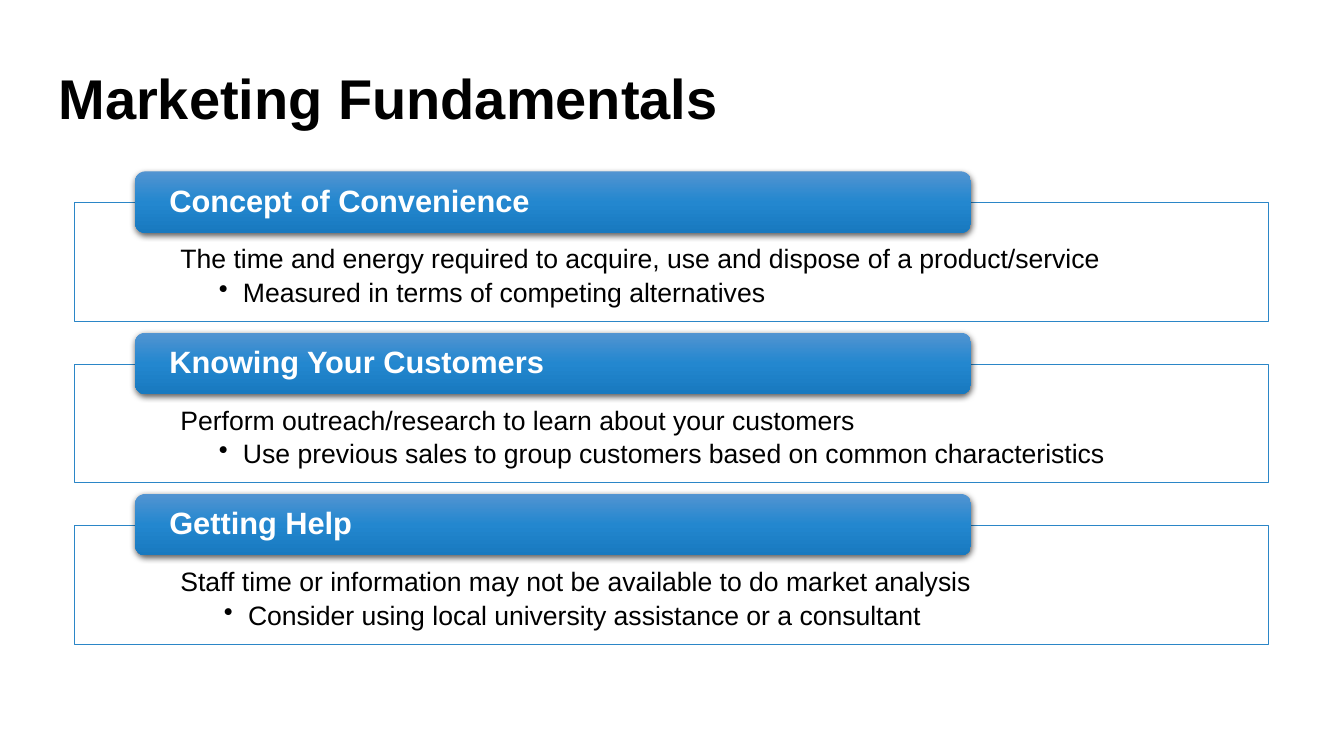
from pptx import Presentation
from pptx.dml.color import RGBColor
from pptx.enum import shapes, text
from pptx.oxml import parse_xml
from pptx.oxml.ns import nsdecls
from pptx.util import Inches, Pt

TITLE = "Marketing Fundamentals"
SECTIONS = [
    ("Concept of Convenience",
     "The time and energy required to acquire, use and dispose of a product/service",
     "Measured in terms of competing alternatives", 0.75),
    ("Knowing Your Customers",
     "Perform outreach/research to learn about your customers",
     "Use previous sales to group customers based on common characteristics", 0.75),
    ("Getting Help",
     "Staff time or information may not be available to do market analysis",
     "Consider using local university assistance or a consultant", 0.8),
]
COLORS = {"white": "FFFFFF", "black": "000000", "outline": "2B86C7"}
BAR_STOPS = [(0, "5294D1"), (50, "2387CF"), (100, "1879BF")]
FONT = "Arial"
BAR_TOP, PITCH, PANEL_DROP = 1.7, 1.6, 0.31
HANGING = 0.24


def rgb(name):
    return RGBColor.from_string(COLORS[name])


def set_frame(tf, left, top, right, bottom, anchor):
    tf.word_wrap = True
    tf.margin_left, tf.margin_top = Inches(left), Inches(top)
    tf.margin_right, tf.margin_bottom = Inches(right), Inches(bottom)
    tf.vertical_anchor = anchor


def format_paragraph(p, size, color, bold=False):
    p.alignment = text.PP_ALIGN.LEFT
    for r in p.runs:
        r.font.name, r.font.size, r.font.bold = FONT, Pt(size), bold
        r.font.color.rgb = rgb(color)


def indent(p, left, first=0):
    pPr = p._p.get_or_add_pPr()
    pPr.set("marL", str(Inches(left)))
    pPr.set("indent", str(Inches(first)))
    return pPr


def add_panel(slide, top, statement, point, point_indent):
    sp = slide.shapes.add_shape(shapes.MSO_SHAPE.RECTANGLE, Inches(0.74),
                                Inches(top), Inches(11.84), Inches(1.18))
    sp.shadow.inherit = False
    sp.fill.solid()
    sp.fill.fore_color.rgb = rgb("white")
    sp.line.color.rgb = rgb("outline")
    sp.line.width = Pt(0.5)
    tf = sp.text_frame
    set_frame(tf, 0.92, 0.43, 0.92, 0.15, text.MSO_ANCHOR.TOP)
    tf.text = f"{statement}\n{point}"
    for p in tf.paragraphs:
        p.line_spacing = 0.9
        p.space_after = Pt(3.5)
        format_paragraph(p, 19, "black")
    indent(tf.paragraphs[0], 0.13)
    pPr = indent(tf.paragraphs[1], point_indent, -HANGING)
    pPr.append(parse_xml(f'<a:buChar {nsdecls("a")} char="•"/>'))


def add_bar(slide, top, heading):
    sp = slide.shapes.add_shape(shapes.MSO_SHAPE.ROUNDED_RECTANGLE, Inches(1.34),
                                Inches(top), Inches(8.29), Inches(0.61))
    sp.shadow.inherit = False
    sp.line.fill.background()
    stops = "".join(f'<a:gs pos="{pos * 1000}"><a:srgbClr val="{color}"/></a:gs>'
                    for pos, color in BAR_STOPS)
    spPr = sp._element.spPr
    spPr.insert(2, parse_xml(
        f'<a:gradFill {nsdecls("a")} rotWithShape="1"><a:gsLst>{stops}</a:gsLst>'
        '<a:lin ang="5400000" scaled="0"/></a:gradFill>'))
    spPr[-1].append(parse_xml(
        f'<a:outerShdw {nsdecls("a")} blurRad="{Pt(4.5)}" dist="{Pt(1.5)}" '
        f'dir="5400000" rotWithShape="0"><a:srgbClr val="{COLORS["black"]}">'
        '<a:alpha val="63000"/></a:srgbClr></a:outerShdw>'))
    tf = sp.text_frame
    set_frame(tf, 0.31, 0, 0.31, 0, text.MSO_ANCHOR.MIDDLE)
    tf.text = heading
    p = tf.paragraphs[0]
    p.line_spacing = 0.9
    format_paragraph(p, 22, "white", True)


def main():
    prs = Presentation()
    prs.slide_width, prs.slide_height = Inches(13.33), Inches(7.5)
    slide = prs.slides.add_slide(prs.slide_layouts[6])

    title = slide.shapes.add_textbox(Inches(0.58), Inches(0.58),
                                     Inches(12.18), Inches(0.5))
    tf = title.text_frame
    set_frame(tf, 0, 0.05, 0, 0, text.MSO_ANCHOR.TOP)
    tf.text = TITLE
    format_paragraph(tf.paragraphs[0], 40, "black", True)

    for i, (heading, statement, point, point_indent) in enumerate(SECTIONS):
        top = BAR_TOP + i * PITCH
        add_panel(slide, top + PANEL_DROP, statement, point, point_indent)
        add_bar(slide, top, heading)

    prs.save("out.pptx")


if __name__ == "__main__":
    main()
